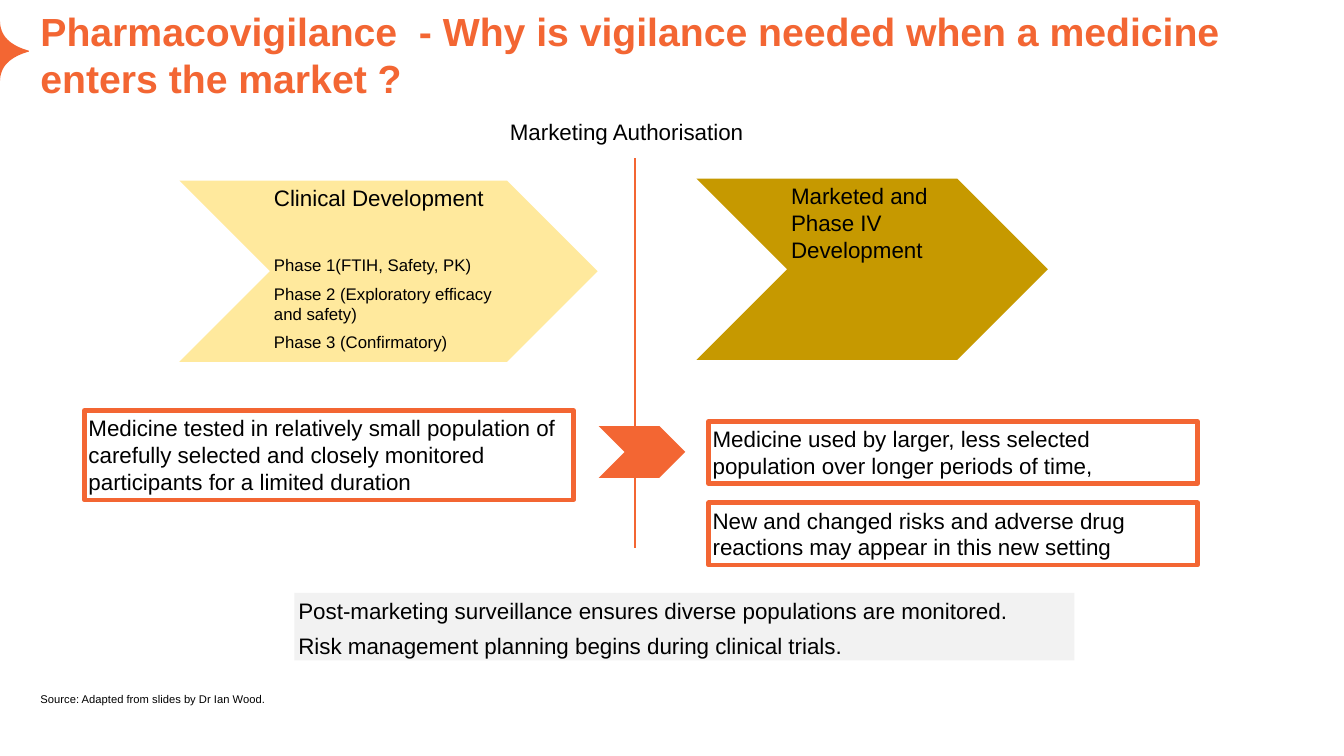
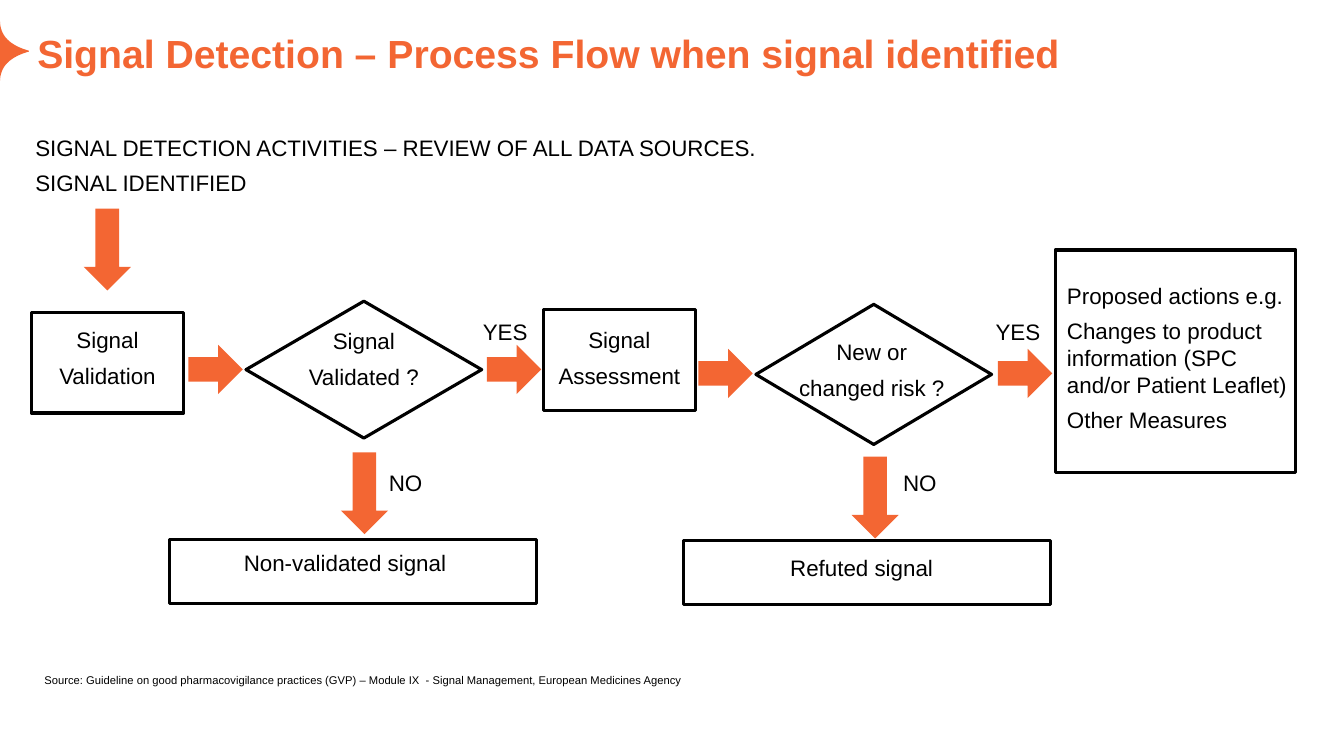
"""Build two pharmacovigilance slides: market entry and signal detection."""
from lxml import etree
from pptx import Presentation
from pptx.dml.color import RGBColor
from pptx.enum.shapes import MSO_CONNECTOR, MSO_SHAPE as SHAPE
from pptx.enum.text import MSO_ANCHOR as ANCHOR, MSO_AUTO_SIZE, PP_ALIGN as ALIGN
from pptx.oxml.ns import qn
from pptx.util import Cm, Pt

ORANGE = RGBColor(0xF3, 0x66, 0x33)
BLACK = RGBColor(0, 0, 0)
PALE_YELLOW = RGBColor(0xFF, 0xE9, 0x9D)
GOLD = RGBColor(0xC6, 0x99, 0x00)
LIGHT_GREY = RGBColor(0xF2, 0xF2, 0xF2)
FONT = "Arial"
INSET = 0.1
GAP = Pt(3)


def place(shape, left, top, width, height):
    """Move and size a shape, in centimetres."""
    shape.left, shape.top = Cm(left), Cm(top)
    shape.width, shape.height = Cm(width), Cm(height)


def write(shape, lines, size=16, align=ALIGN.LEFT, anchor=ANCHOR.TOP,
          insets=(INSET,) * 4, wrap=True, color=BLACK, bold=False, gap=GAP):
    """Fill a shape with one paragraph per line and return the paragraphs."""
    frame = shape.text_frame
    frame.auto_size = MSO_AUTO_SIZE.NONE
    frame.word_wrap = wrap
    frame.vertical_anchor = anchor
    (frame.margin_left, frame.margin_top,
     frame.margin_right, frame.margin_bottom) = map(Cm, insets)
    frame.text = "\n".join(lines)
    for index, paragraph in enumerate(frame.paragraphs):
        if shape.is_placeholder:
            properties = paragraph._p.get_or_add_pPr()
            properties.set("marL", "0")
            properties.set("indent", "0")
            etree.SubElement(properties, qn("a:buNone"))
        paragraph.alignment = align
        paragraph.line_spacing = 1.0
        paragraph.space_before = gap if index else Pt(0)
        paragraph.space_after = gap
        font = paragraph.font
        font.name, font.size, font.bold = FONT, Pt(size), bold
        font.color.rgb = color
    return frame.paragraphs


def add_block(slide, kind, box, fill=None, line=None, weight=2.25):
    """Add a flat preset shape with an optional fill and outline."""
    shape = slide.shapes.add_shape(kind, *map(Cm, box))
    shape.shadow.inherit = False
    if fill is None:
        shape.fill.background()
    else:
        shape.fill.solid()
        shape.fill.fore_color.rgb = fill
    if line is None:
        shape.line.fill.background()
    else:
        shape.line.color.rgb = line
        shape.line.width = Pt(weight)
    return shape


def add_step(slide, kind, box, lines, shift=(0, 0)):
    """Add an outlined flow step, its text nudged left and up by shift."""
    shape = add_block(slide, kind, box, line=BLACK)
    right, bottom = shift
    write(shape, lines, align=ALIGN.CENTER, anchor=ANCHOR.MIDDLE,
          insets=(0, 0, 2 * right, 2 * bottom), wrap=False)


def add_label(slide, left, top, text, size=16):
    """Add a free single-line label."""
    label = slide.shapes.add_textbox(Cm(left), Cm(top), Cm(2.54), Cm(0.85))
    write(label, [text], size, wrap=False)


def add_divider(slide, x, top, bottom):
    """Add a vertical orange line."""
    line = slide.shapes.add_connector(
        MSO_CONNECTOR.STRAIGHT, Cm(x), Cm(top), Cm(x), Cm(bottom))
    line.line.color.rgb = ORANGE
    line.line.width = Pt(1.5)
    etree.SubElement(line._element.spPr, qn("a:effectLst"))


def add_edge_accent(slide):
    """Draw the orange point at the left edge."""
    curve = ((0, 0.51), (0, 0.91), (0.25, 1.14), (0.73, 1.28))
    steps = 16
    upper = []
    for step in range(steps + 1):
        t = step / steps
        weights = ((1 - t) ** 3, 3 * t * (1 - t) ** 2, 3 * t * t * (1 - t), t ** 3)
        upper.append(tuple(sum(weight * point[axis] for weight, point in zip(weights, curve))
                           for axis in (0, 1)))
    lower = [(x, 2.58 - y) for x, y in reversed(upper)]
    outline = [(Cm(x), Cm(y)) for x, y in upper + lower]
    builder = slide.shapes.build_freeform(*outline[0])
    builder.add_line_segments(outline[1:], close=True)
    accent = builder.convert_to_shape()
    accent.shadow.inherit = False
    accent.fill.solid()
    accent.fill.fore_color.rgb = ORANGE
    accent.line.fill.background()


def add_slide(presentation, title, left, top, height):
    """Add a slide with accent and styled title; return it with its body."""
    slide = presentation.slides.add_slide(presentation.slide_layouts[1])
    add_edge_accent(slide)
    heading = slide.shapes.title
    place(heading, left, top, 31.83, height)
    write(heading, [title], 28, anchor=ANCHOR.BOTTOM, insets=(0,) * 4,
          color=ORANGE, bold=True, gap=Pt(0))
    return slide, slide.placeholders[1]


def build_market_slide(presentation):
    """Build the slide on vigilance before and after authorisation."""
    slide, body = add_slide(
        presentation,
        "Pharmacovigilance  - Why is vigilance needed when a medicine enters the market ?",
        1.02, 0.18, 2.38)

    clinical = add_block(slide, SHAPE.CHEVRON, (4.52, 4.55, 10.54, 4.57), PALE_YELLOW)
    heading, *phases = write(clinical, [
        "Clinical Development",
        "Phase 1(FTIH, Safety, PK)",
        "Phase 2 (Exploratory efficacy and safety)",
        "Phase 3 (Confirmatory)"])
    for phase in phases:
        phase.font.size = Pt(12)
    phases[0].space_before = Pt(28)
    marketed = add_block(slide, SHAPE.CHEVRON, (17.55, 4.5, 8.86, 4.57), GOLD)
    write(marketed, ["Marketed and Phase IV Development"])

    add_label(slide, 12.75, 2.87, "Marketing Authorisation")
    add_divider(slide, 16, 3.99, 13.82)
    add_block(slide, SHAPE.CHEVRON, (15.09, 10.74, 2.18, 1.3), ORANGE)

    for left, top, height, text in (
            (2.13, 10.34, 2.26, "Medicine tested in relatively small population of carefully "
             "selected and closely monitored participants for a limited duration"),
            (17.86, 10.62, 1.57, "Medicine used by larger, less selected population over "
             "longer periods of time,"),
            (17.86, 12.67, 1.57, "New and changed risks and adverse drug reactions may "
             "appear in this new setting")):
        box = add_block(slide, SHAPE.RECTANGLE, (left, top, 12.32, height),
                        line=ORANGE, weight=3.25)
        write(box, [text])

    summary = add_block(slide, SHAPE.RECTANGLE, (7.42, 14.94, 19.66, 1.7), LIGHT_GREY)
    write(summary, [
        "Post-marketing surveillance ensures diverse populations are monitored.",
        "Risk management planning begins during clinical trials."])
    place(body, 1.02, 16.94, 31.83, 0.84)
    write(body, ["Source: Adapted from slides by Dr Ian Wood."], 8,
          anchor=ANCHOR.BOTTOM, insets=(0,) * 4)


def build_signal_slide(presentation):
    """Build the signal detection flow chart."""
    slide, body = add_slide(
        presentation, "Signal Detection – Process Flow when signal identified",
        0.94, 0.74, 1.19)
    place(body, 0.79, 3.28, 18.9, 1.78)
    write(body, ["SIGNAL DETECTION ACTIVITIES – REVIEW OF ALL DATA SOURCES.",
                 "SIGNAL IDENTIFIED"])

    for kind, box, lines, shift in (
            (SHAPE.RECTANGLE, (0.79, 7.87, 3.84, 2.54), ["Signal", "Validation"], (0, 0.13)),
            (SHAPE.FLOWCHART_DECISION, (6.2, 7.59, 5.94, 3.45),
             ["Signal", "Validated ?"], (0, 0.28)),
            (SHAPE.RECTANGLE, (13.69, 7.8, 3.84, 2.54), ["Signal", "Assessment"], (0, 0.06)),
            (SHAPE.FLOWCHART_DECISION, (19.05, 7.67, 5.94, 3.53),
             ["New or", "changed risk ?"], (0.05, 0.12)),
            (SHAPE.RECTANGLE, (4.27, 13.59, 9.25, 1.63),
             ["Non-validated signal"], (0.2, 0.22)),
            (SHAPE.RECTANGLE, (17.22, 13.61, 9.25, 1.63), ["Refuted signal"], (0.13, 0.13))):
        add_step(slide, kind, box, lines, shift)

    actions = add_block(slide, SHAPE.RECTANGLE, (26.59, 6.3, 6.07, 5.61), line=BLACK)
    write(actions, ["Proposed actions e.g.",
                    "Changes to product information (SPC and/or Patient Leaflet)",
                    "Other Measures"],
          anchor=ANCHOR.MIDDLE, insets=(0.3, 0, 0, 0.2))

    for left, top in ((2.11, 5.26), (8.59, 11.4), (21.46, 11.51)):
        add_block(slide, SHAPE.DOWN_ARROW, (left, top, 1.19, 2.06), ORANGE)
    for left, top in ((4.75, 8.69), (12.27, 8.69), (17.6, 8.79), (25.15, 8.79)):
        add_block(slide, SHAPE.RIGHT_ARROW, (left, top, 1.37, 1.24), ORANGE)
    for left, top, answer in ((12.07, 7.92, "YES"), (24.99, 7.92, "YES"),
                              (9.7, 11.73, "NO"), (22.66, 11.73, "NO")):
        add_label(slide, left, top, answer)

    add_label(slide, 1.02, 16.87,
              "Source: Guideline on good pharmacovigilance practices (GVP) – Module IX  "
              "- Signal Management, European Medicines Agency", 8)


def main():
    """Build and save the presentation."""
    presentation = Presentation()
    presentation.slide_width, presentation.slide_height = Cm(33.87), Cm(19.05)
    build_market_slide(presentation)
    build_signal_slide(presentation)
    presentation.save("out.pptx")


if __name__ == "__main__":
    main()
